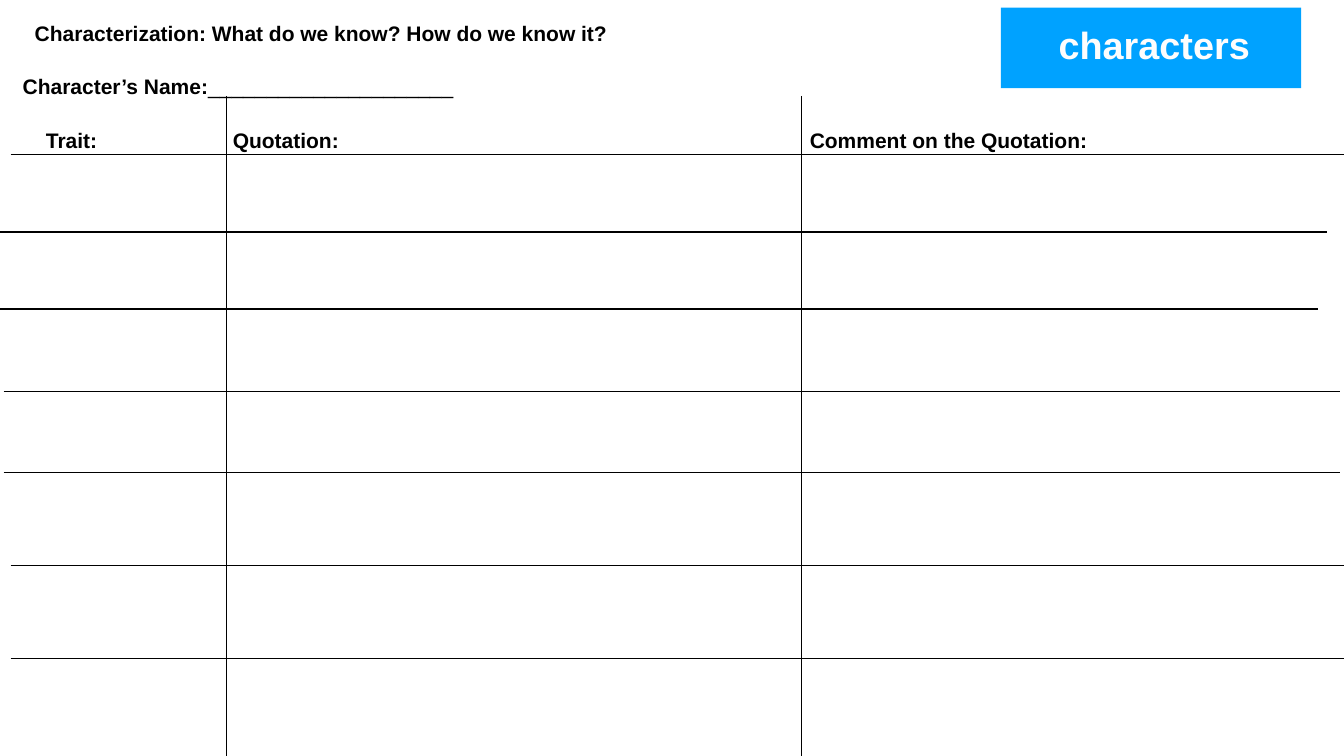
from dataclasses import dataclass

import pptx
import pptx.dml.color
import pptx.enum.shapes
import pptx.enum.text
import pptx.oxml
import pptx.util

PX = 9144  # EMU per px: 100 px to the inch
SLIDE_W, SLIDE_H = 2667, 1500


@dataclass(frozen=True)
class Theme:
    font: str = "Arial"
    ink: str = "000000"
    badge: str = "00A2FF"
    badge_text: str = "FDFDFD"
    body_size: int = 30
    badge_size: int = 54
    rule_width: int = 2
    inset: int = 6


THEME = Theme()


def emu(*lengths):
    return [pptx.util.Emu(n * PX) for n in lengths]


def rgb(value):
    return pptx.dml.color.RGBColor.from_string(value)


def add_rule(s, x1, y1, x2, y2):
    line = s.shapes.add_connector(
        pptx.enum.shapes.MSO_CONNECTOR.STRAIGHT, *emu(x1, y1, x2, y2))
    line.line.color.rgb = rgb(THEME.ink)
    line.line.width = pptx.util.Pt(THEME.rule_width)
    pptx.oxml.ns  # namespace map used by qn below
    line._element.spPr.append(
        pptx.oxml.xmlchemy.OxmlElement("a:effectLst"))


def add_label(s, box, text, size=THEME.body_size, color=THEME.ink,
              align=pptx.enum.text.PP_ALIGN.LEFT, wrap=False):
    tf = s.shapes.add_textbox(*emu(*box)).text_frame
    tf.margin_left = tf.margin_right = emu(THEME.inset)[0]
    tf.margin_top = tf.margin_bottom = emu(THEME.inset)[0]
    tf.vertical_anchor = pptx.enum.text.MSO_ANCHOR.MIDDLE
    tf.word_wrap = wrap
    tf.text = text
    p = tf.paragraphs[0]
    p.alignment = align
    r = p.runs[0]
    r.font.name = THEME.font
    r.font.size = pptx.util.Pt(size)
    r.font.bold = True
    r.font.color.rgb = rgb(color)
    return p


def add_heading(s, x, y):
    """Title, with the name line to fill in below it."""
    add_label(s, (x + 24, y, 1157, 61),
              "Characterization: What do we know? How do we know it?")
    p = add_label(s, (x, y + 98, 886, 77), "Character’s Name:")
    blank = p.add_run()
    blank.text = "_" * 21
    blank.font.name = THEME.font
    blank.font.size = pptx.util.Pt(THEME.body_size)
    blank.font.bold = False
    blank.font.color.rgb = rgb(THEME.ink)


def add_badge(s, x, y, w, h):
    """Coloured box with the topic word."""
    sp = s.shapes.add_shape(
        pptx.enum.shapes.MSO_SHAPE.RECTANGLE, *emu(x, y, w, h))
    sp.shadow.inherit = False
    sp.fill.solid()
    sp.fill.fore_color.rgb = rgb(THEME.badge)
    sp.line.fill.background()
    add_label(s, (x + 94, y + 28, 421, 90), "characters", THEME.badge_size,
              THEME.badge_text, pptx.enum.text.PP_ALIGN.CENTER, wrap=True)


def add_worksheet(s, x, y, w, h):
    """Ruled grid with three headed columns."""
    # Column rules
    for column_x in (450, 1591):
        add_rule(s, x + column_x, y, x + column_x, y + h)
    # Row rules: left end, right end, distance below the top
    rows = ((21, w, 117), (1, 2633, 270), (0, 2615, 423), (7, 2660, 587),
            (7, 2660, 748), (21, w, 932), (21, w, 1117))
    for left, right, row_y in rows:
        add_rule(s, x + left, y + row_y, x + right, y + row_y)
    # Column headings
    headings = ((85, 123, "Trait:"), (456, 232, "Quotation:"),
                (1601, 576, "Comment on the Quotation:"))
    for left, width, text in headings:
        add_label(s, (x + left, y + 57, width, 61), text)


def main():
    prs = pptx.Presentation()
    prs.slide_width, prs.slide_height = emu(SLIDE_W, SLIDE_H)
    s = prs.slides.add_slide(prs.slide_layouts[6])
    add_worksheet(s, 0, 190, SLIDE_W, SLIDE_H - 190)
    add_heading(s, 39, 35)
    add_badge(s, 1986, 15, 596, 160)
    prs.save("out.pptx")


if __name__ == "__main__":
    main()
